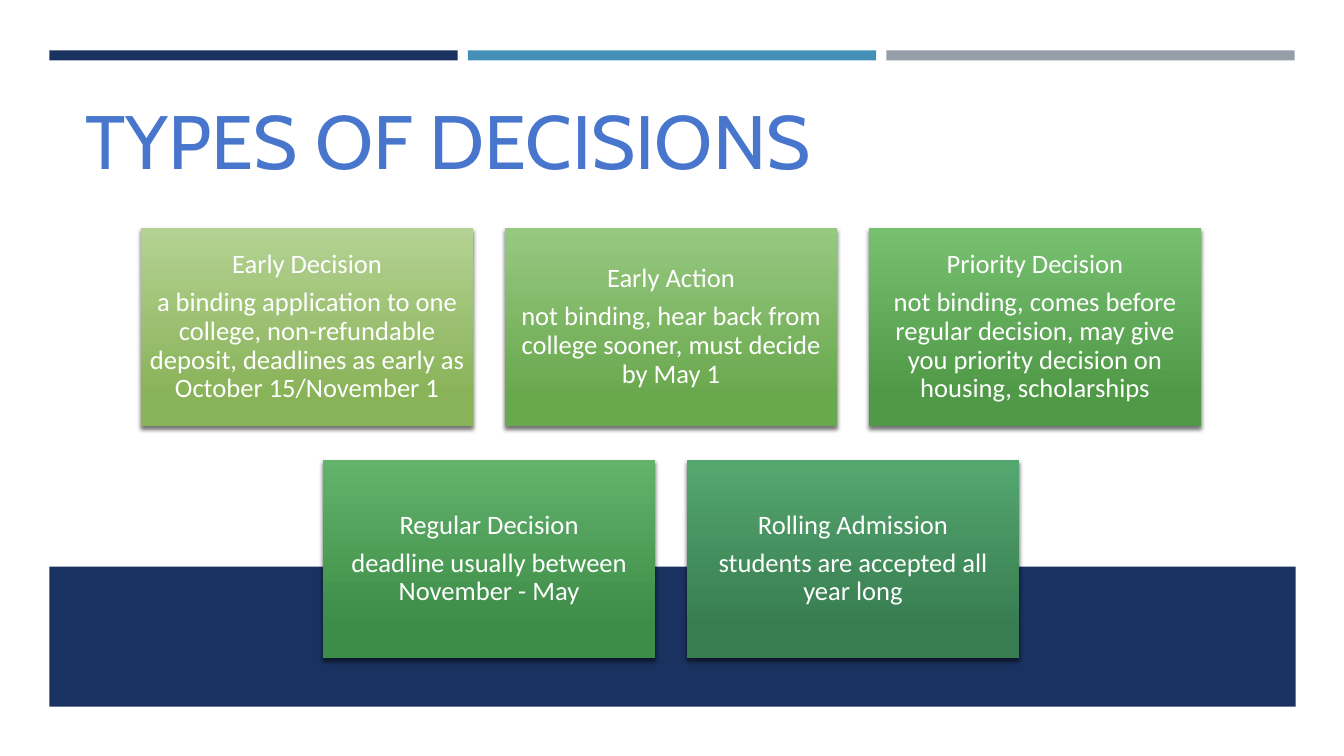
from dataclasses import dataclass
from typing import Any

from lxml.etree import SubElement
from pptx import Presentation
from pptx.dml.color import RGBColor as Color
from pptx.enum.shapes import MSO_SHAPE as Preset
from pptx.enum.text import MSO_ANCHOR as Anchor, PP_ALIGN as Align
from pptx.oxml.ns import qn
from pptx.util import Inches, Pt

NAVY = Color(0x1A, 0x32, 0x60)
SKY = Color(0x45, 0x90, 0xB8)
GREY = Color(0x96, 0x9F, 0xA7)
TITLE_BLUE = Color(0x48, 0x76, 0xCD)
WHITE = Color(0xFF, 0xFF, 0xFF)
LIME_LIGHT, LIME_DARK = Color(0xB4, 0xD2, 0x93), Color(0x89, 0xB3, 0x59)
LEAF_LIGHT, LEAF_DARK = Color(0x97, 0xC9, 0x81), Color(0x6A, 0xA8, 0x4E)
GRASS_LIGHT, GRASS_DARK = Color(0x77, 0xC0, 0x70), Color(0x4F, 0x99, 0x47)
FERN_LIGHT, FERN_DARK = Color(0x63, 0xB3, 0x6D), Color(0x3D, 0x8D, 0x48)
PINE_LIGHT, PINE_DARK = Color(0x55, 0xA7, 0x70), Color(0x37, 0x7D, 0x50)

MARGIN = 0.49
BAR_TOP, BAR_PITCH, BAR_WIDTH, BAR_HEIGHT = 0.5, 4.15, 4.05, 0.1
GRID_LEFT, GRID_TOP = 1.4, 2.26
COLUMN_PITCH, ROW_PITCH = 3.61, 2.3
CARD_WIDTH, CARD_HEIGHT = 3.29, 1.97

TITLE_FONT = {"name": "Cabin", "size": Pt(54)}
CARD_FONT = {"name": "Calibri", "size": Pt(19)}
CARD_FRAME = {
    "word_wrap": True,
    "vertical_anchor": Anchor.MIDDLE,
    "margin_left": Inches(0.08),
    "margin_right": Inches(0.08),
    "margin_top": Inches(0.08),
    "margin_bottom": Inches(0.08),
}
CARD_PARAGRAPH = {
    "alignment": Align.CENTER,
    "line_spacing": 0.9,
    "space_after": Pt(6.65),
}


@dataclass
class Card:
    column: float
    row: int
    heading: str
    detail: str
    light: Color
    dark: Color


CARDS = [
    Card(0, 0, "Early Decision",
         "a binding application to one college, non-refundable deposit, "
         "deadlines as early as October 15/November 1",
         LIME_LIGHT, LIME_DARK),
    Card(1, 0, "Early Action",
         "not binding, hear back from college sooner, must decide by May 1",
         LEAF_LIGHT, LEAF_DARK),
    Card(2, 0, "Priority Decision",
         "not binding, comes before regular decision, may give you "
         "priority decision on housing, scholarships",
         GRASS_LIGHT, GRASS_DARK),
    Card(0.5, 1, "Regular Decision",
         "deadline usually between November - May",
         FERN_LIGHT, FERN_DARK),
    Card(1.5, 1, "Rolling Admission",
         "students are accepted all year long",
         PINE_LIGHT, PINE_DARK),
]


def apply_format(target: Any, values: dict[str, Any]) -> None:
    for name, value in values.items():
        setattr(target, name, value)


def add_span(para: Any, text: str, font: dict[str, Any], color: Color) -> None:
    span = para.add_run()
    span.text = text
    apply_format(span.font, font)
    span.font.color.rgb = color


def add_box(page: Any, left: float, top: float, width: float, height: float) -> Any:
    box = page.shapes.add_shape(
        Preset.RECTANGLE, Inches(left), Inches(top), Inches(width), Inches(height))
    box.shadow.inherit = False
    box.line.fill.background()
    return box


def add_band(page: Any, left: float, top: float, width: float, height: float,
             color: Color) -> None:
    band = add_box(page, left, top, width, height)
    band.fill.solid()
    band.fill.fore_color.rgb = color


def add_shadow(box: Any) -> None:
    effects = box.element.spPr.find(qn("a:effectLst"))
    shadow = SubElement(effects, qn("a:outerShdw"), blurRad=str(Pt(3)),
                        dist=str(Pt(2)), dir="5400000", rotWithShape="0")
    color = SubElement(shadow, qn("a:srgbClr"), val="000000")
    SubElement(color, qn("a:alpha"), val="55000")


def add_card(page: Any, card: Card) -> None:
    box = add_box(page, GRID_LEFT + card.column * COLUMN_PITCH,
                  GRID_TOP + card.row * ROW_PITCH, CARD_WIDTH, CARD_HEIGHT)
    box.fill.gradient()
    box.fill.gradient_angle = 270
    stops = zip(box.fill.gradient_stops, (0, 0.84), (card.light, card.dark))
    for stop, position, color in stops:
        stop.position = position
        stop.color.rgb = color
    add_shadow(box)
    frame = box.text_frame
    apply_format(frame, CARD_FRAME)
    for para, text in ((frame.paragraphs[0], card.heading),
                       (frame.add_paragraph(), card.detail)):
        apply_format(para, CARD_PARAGRAPH)
        add_span(para, text, CARD_FONT, WHITE)


def add_title(page: Any, text: str) -> None:
    box = page.shapes.add_textbox(
        Inches(0.75), Inches(0.75), Inches(11.8), Inches(1.26))
    frame = box.text_frame
    apply_format(frame, {"word_wrap": True, "vertical_anchor": Anchor.MIDDLE})
    add_span(frame.paragraphs[0], text, TITLE_FONT, TITLE_BLUE)


def main() -> None:
    deck = Presentation()
    apply_format(deck, {"slide_width": Inches(13.33), "slide_height": Inches(7.5)})
    page = deck.slides.add_slide(deck.slide_layouts[6])
    for index, color in enumerate((NAVY, SKY, GREY)):
        add_band(page, MARGIN + index * BAR_PITCH, BAR_TOP, BAR_WIDTH, BAR_HEIGHT, color)
    add_band(page, MARGIN, 5.62, 12.36, 1.39, NAVY)
    add_title(page, "TYPES OF DECISIONS")
    for card in CARDS:
        add_card(page, card)
    deck.save("out.pptx")


if __name__ == "__main__":
    main()
